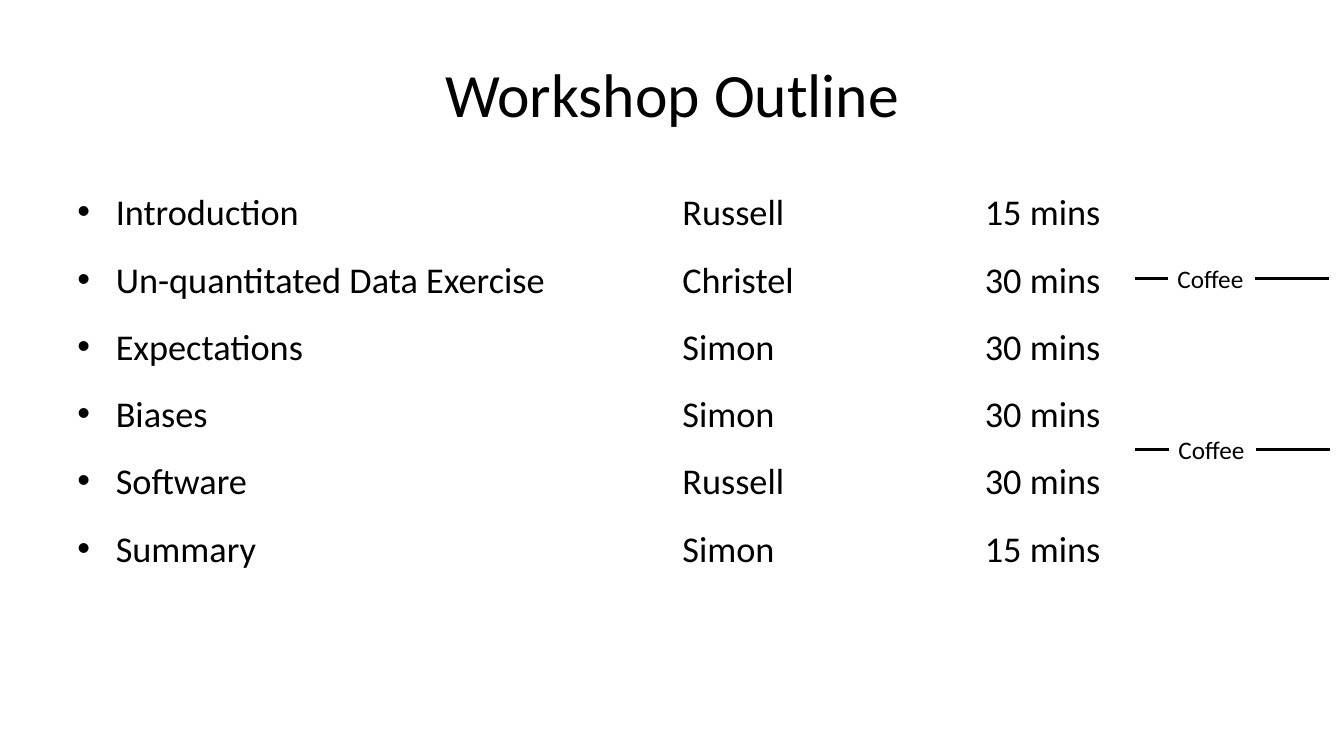
from dataclasses import dataclass

from lxml.etree import SubElement
from pptx import Presentation
from pptx.dml.color import RGBColor
from pptx.enum.shapes import MSO_CONNECTOR as Connector
from pptx.enum.text import MSO_ANCHOR as Anchor, PP_ALIGN as Align
from pptx.oxml.ns import qn
from pptx.util import Emu, Pt

EMU_PER_PX = 9144  # 100 px to the inch
TOP, LEFT, BOTTOM, RIGHT = range(4)


@dataclass(frozen=True)
class Theme:
    font: str = "Calibri"
    bullet_font: str = "Arial"
    ink: RGBColor = RGBColor(0, 0, 0)
    title_size: float = 44
    body_size: float = 25.9
    label_size: float = 18
    line_width: float = 2.25
    line_spacing: float = 1.4
    space_before: float = 4.5


def px(length):
    return Emu(length * EMU_PER_PX)


class SlideBuilder:
    def __init__(self, slide, theme):
        self.slide = slide
        self.theme = theme

    def text_box(self, left, top, width, height, wrap=True):
        box = self.slide.shapes.add_textbox(px(left), px(top), px(width), px(height))
        box.text_frame.word_wrap = wrap
        return box

    def style(self, paragraph, size):
        font = paragraph.font
        font.name = self.theme.font
        font.size = Pt(size)
        font.color.rgb = self.theme.ink

    def title(self, text, left, top, width, height):
        frame = self.text_box(left, top, width, height).text_frame
        frame.vertical_anchor = Anchor.MIDDLE
        frame.text = text
        paragraph = frame.paragraphs[0]
        paragraph.alignment = Align.CENTER
        self.style(paragraph, self.theme.title_size)

    def agenda(self, rows, left, top, width, height, indent, tabs):
        """Bulleted lines whose columns are set by tab stops."""
        frame = self.text_box(left, top, width, height).text_frame
        frame.text = "\n".join("\t".join(row) for row in rows)
        for index, paragraph in enumerate(frame.paragraphs):
            self.bullet(paragraph, indent, tabs)
            paragraph.line_spacing = self.theme.line_spacing
            paragraph.space_before = Pt(self.theme.space_before if index else 0)
            self.style(paragraph, self.theme.body_size)

    def bullet(self, paragraph, indent, tabs):
        properties = paragraph._p.get_or_add_pPr()
        properties.set("marL", str(px(indent)))
        properties.set("indent", str(px(-indent)))
        SubElement(properties, qn("a:buFont"), typeface=self.theme.bullet_font)
        SubElement(properties, qn("a:buChar"), char="•")
        stops = SubElement(properties, qn("a:tabLst"))
        for tab in tabs:
            SubElement(stops, qn("a:tab"), pos=str(px(tab)), algn="l")

    def label(self, text, left, top, width, height):
        box = self.text_box(left, top, width, height, wrap=False)
        box.text_frame.text = text
        self.style(box.text_frame.paragraphs[0], self.theme.label_size)
        return box

    def side_line(self, box, side, outer_x):
        """Level line from outer_x to the middle of one side of the box."""
        inner_x = box.left if side == LEFT else box.left + box.width
        y = box.top + box.height // 2
        line = self.slide.shapes.add_connector(
            Connector.STRAIGHT, px(outer_x), y, inner_x, y)
        line.end_connect(box, side)
        line.line.color.rgb = self.theme.ink
        line.line.width = Pt(self.theme.line_width)
        SubElement(line._element.spPr, qn("a:effectLst"))

    def coffee_break(self, left, top):
        box = self.label("Coffee", left, top, 87, 40)
        self.side_line(box, LEFT, 1126)
        self.side_line(box, RIGHT, left + 160)


SESSIONS = [
    ("Introduction", "Russell", "15 mins"),
    ("Un-quantitated Data Exercise", "Christel", "30 mins"),
    ("Expectations", "Simon", "30 mins"),
    ("Biases", "Simon", "30 mins"),
    ("Software", "Russell", "30 mins"),
    ("Summary", "Simon", "15 mins"),
]


def main():
    presentation = Presentation()
    presentation.slide_width = px(1333)
    presentation.slide_height = px(750)
    slide = presentation.slides.add_slide(presentation.slide_layouts[6])
    builder = SlideBuilder(slide, Theme())
    builder.title("Workshop Outline", 67, 30, 1200, 125)
    builder.agenda(SESSIONS, 67, 166, 1200, 419, indent=38, tabs=(600, 900))
    for left, top in ((1158, 256), (1159, 426)):
        builder.coffee_break(left, top)
    presentation.save("out.pptx")


if __name__ == "__main__":
    main()
